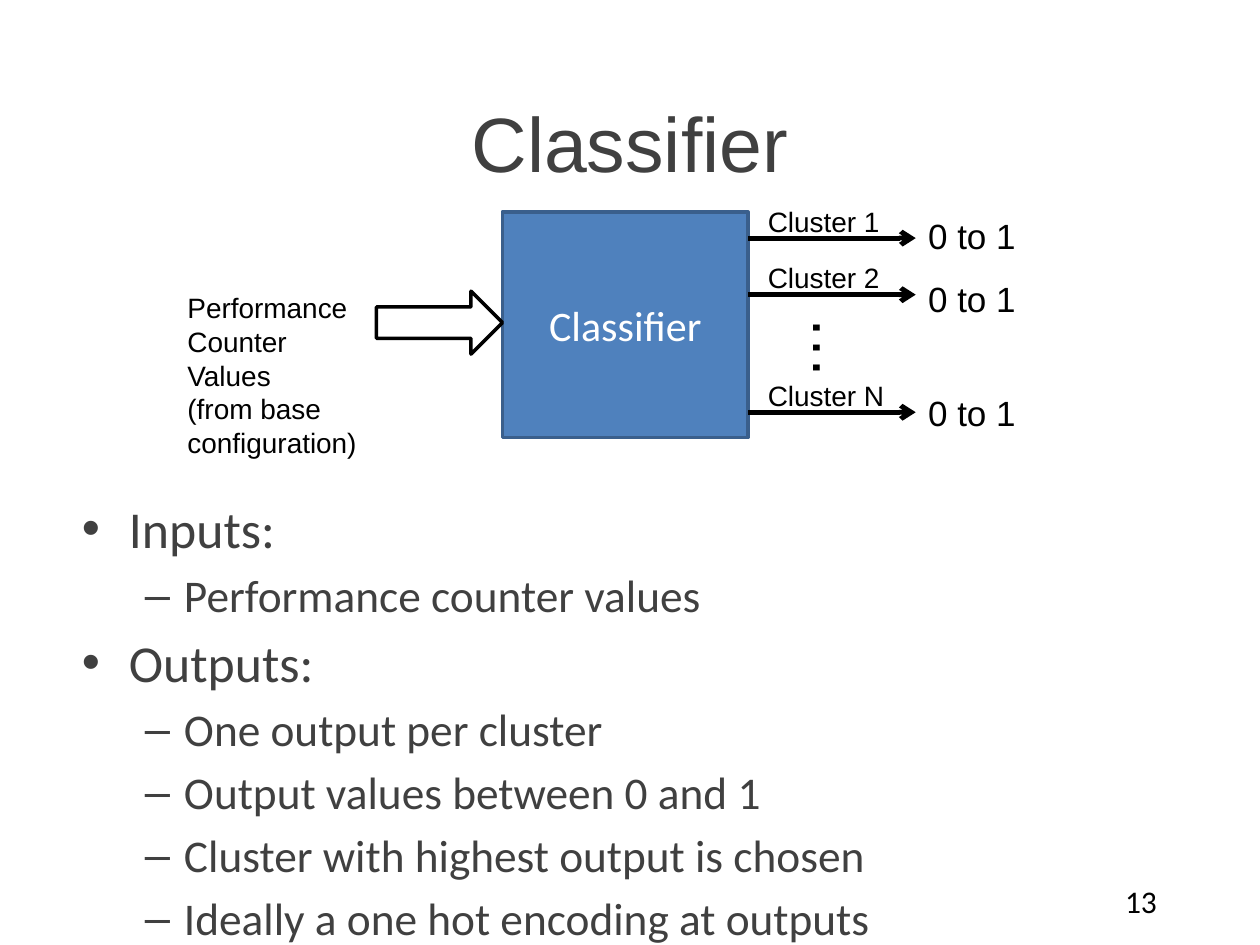
from lxml import etree
from pptx import Presentation
from pptx.dml.color import RGBColor
from pptx.enum.shapes import MSO_CONNECTOR, MSO_SHAPE
from pptx.enum.text import MSO_ANCHOR, PP_ALIGN
from pptx.oxml.ns import qn
from pptx.util import Cm, Pt

STRAIGHT = MSO_CONNECTOR.STRAIGHT
RECTANGLE, RIGHT_ARROW = MSO_SHAPE.RECTANGLE, MSO_SHAPE.RIGHT_ARROW
TOP, MIDDLE = MSO_ANCHOR.TOP, MSO_ANCHOR.MIDDLE
LEFT, CENTER = PP_ALIGN.LEFT, PP_ALIGN.CENTER

COLORS = {"ink": "000000", "body": "404040", "block": "4F81BD",
          "edge": "3A5F8C", "white": "FFFFFF"}

OUTLINE = [
    (0, "Inputs:"),
    (1, "Performance counter values"),
    (0, "Outputs:"),
    (1, "One output per cluster"),
    (1, "Output values between 0 and 1"),
    (1, "Cluster with highest output is chosen"),
    (1, "Ideally a one hot encoding at outputs"),
]
LEVELS = [("•", 29.6, 0.95, 0.95), ("–", 25.9, 2.06, 0.79)]
CLUSTERS = [("Cluster 1", 0.81, 0.2), ("Cluster 2", 1.95, 1.47),
            ("Cluster N", 4.32, 3.78)]


def color(name):
    """Return the named palette colour."""
    return RGBColor.from_string(COLORS[name])


def add_span(para, text, size, font, ink):
    """Append one styled run to a paragraph."""
    span = para.add_run()
    span.text = text
    span.font.size = Pt(size)
    span.font.name = font
    span.font.color.rgb = color(ink)


def add_text(page, area, lines, size, font="Arial", ink="ink", align=LEFT, anchor=TOP):
    """Place a wrapped text box, one paragraph per line."""
    box = page.shapes.add_textbox(*map(Cm, area))
    frame = box.text_frame
    frame.word_wrap = True
    frame.vertical_anchor = anchor
    for index, line in enumerate(lines):
        para = frame.add_paragraph() if index else frame.paragraphs[0]
        para.alignment = align
        add_span(para, line, size, font, ink)
    return box


def add_block(page, kind, area, edge, fill=None):
    """Place a flat outlined shape, filled if a colour is named."""
    block = page.shapes.add_shape(kind, *map(Cm, area))
    block.shadow.inherit = False
    if fill:
        block.fill.solid()
        block.fill.fore_color.rgb = color(fill)
    else:
        block.fill.background()
    block.line.color.rgb = color(edge)
    block.line.width = Pt(2)
    return block


def add_arrow(page, left, top, length):
    """Draw a horizontal line with an open arrowhead at its right end."""
    arrow = page.shapes.add_connector(
        STRAIGHT, Cm(left), Cm(top), Cm(left + length), Cm(top))
    arrow.line.color.rgb = color("ink")
    arrow.line.width = Pt(2.75)
    etree.SubElement(arrow.line._get_or_add_ln(), qn("a:tailEnd"), type="arrow")
    etree.SubElement(arrow._element.spPr, qn("a:effectLst"))


def draw_diagram(page, left, top):
    """Draw the classifier block with its input and cluster outputs."""
    block = add_block(page, RECTANGLE, (left + 6.6, top + 0.28, 4.95, 4.55),
                      "edge", "block")
    block.text_frame.vertical_anchor = MIDDLE
    para = block.text_frame.paragraphs[0]
    para.alignment = CENTER
    add_span(para, "Classifier", 24, "Calibri", "white")

    add_block(page, RIGHT_ARROW, (left + 4.06, top + 1.88, 2.54, 1.27), "ink")
    add_text(page, (left, top + 1.75, 4.01, 3),
             ["Performance Counter Values", "(from base configuration)"], 16)

    start, length = left + 11.55, 3.38
    for label, line_top, value_top in CLUSTERS:
        add_arrow(page, start, top + line_top, length)
        add_text(page, (start + 0.15, top + line_top - 0.81, 3.18, 0.94), [label], 16)
        add_text(page, (start + length, top + value_top, 2.9, 1.12), ["0 to 1"], 20)
    dots = add_text(page, (left + 12.7, top + 2, 1.42, 1.7), ["…"], 36)
    dots.rotation = 90


def draw_outline(page, area):
    """Write the two-level bullet list."""
    box = add_text(page, area, [], 0)
    frame = box.text_frame
    for index, (level, text) in enumerate(OUTLINE):
        mark, size, margin, hang = LEVELS[level]
        para = frame.add_paragraph() if index else frame.paragraphs[0]
        para.level = level
        para.space_before = Pt(5)
        properties = para._p.get_or_add_pPr()
        properties.set("marL", str(Cm(margin)))
        properties.set("indent", str(-Cm(hang)))
        etree.SubElement(properties, qn("a:buFont"), typeface="Arial")
        etree.SubElement(properties, qn("a:buChar"), char=mark)
        add_span(para, text, size, "Calibri", "body")


def main():
    """Build and save the slide."""
    deck = Presentation()
    deck.slide_width, deck.slide_height = Cm(25.4), Cm(19.05)
    page = deck.slides.add_slide(deck.slide_layouts[6])
    add_text(page, (1.27, 1.27, 22.86, 3.18), ["Classifier"], 44,
             ink="body", align=CENTER, anchor=MIDDLE)
    draw_outline(page, (1.4, 9.88, 22.86, 8.15))
    add_text(page, (22.43, 17.65, 1.7, 1.02), ["13"], 18, "Calibri")
    draw_diagram(page, 3.53, 3.99)
    deck.save("out.pptx")


if __name__ == "__main__":
    main()
